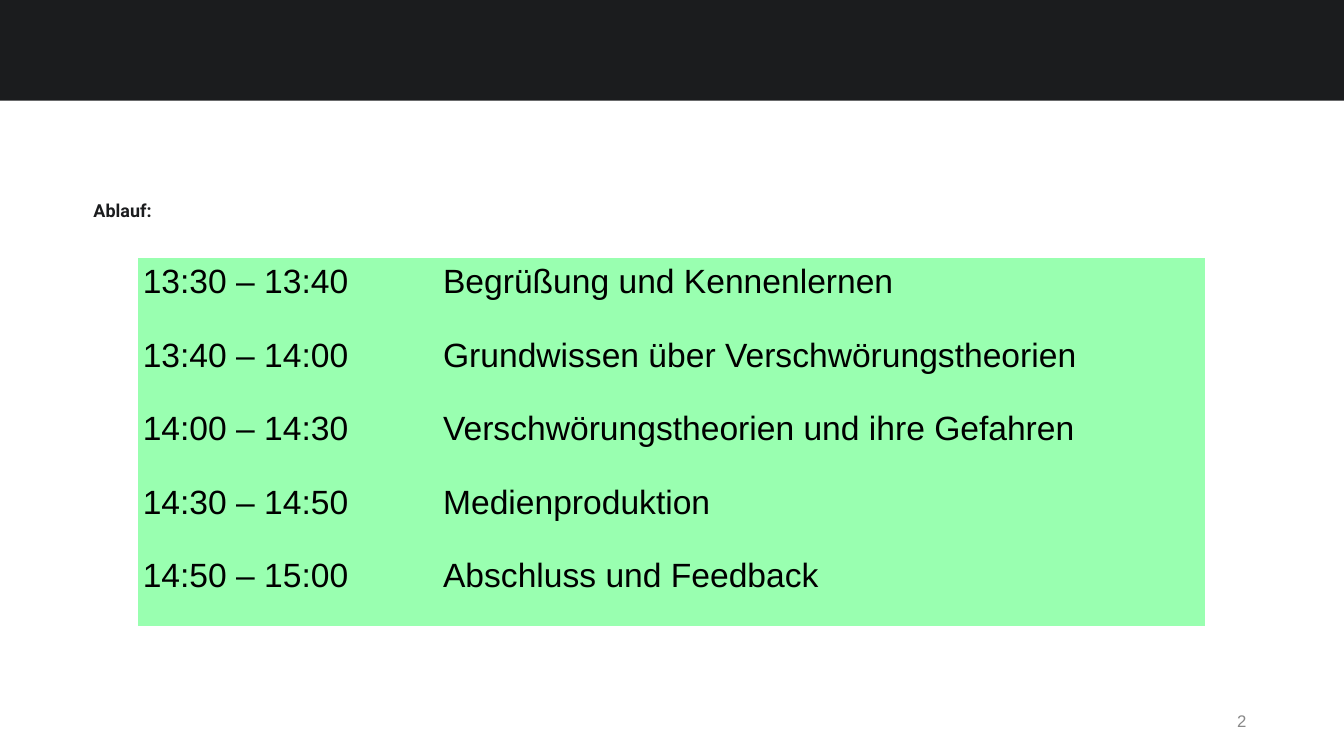
from pptx import Presentation
from pptx.dml.color import RGBColor
from pptx.enum.shapes import MSO_SHAPE
from pptx.enum.text import MSO_ANCHOR, MSO_AUTO_SIZE, PP_ALIGN
from pptx.oxml.ns import qn
from pptx.util import Pt

PX = 9525  # EMU in one px, 96 px to the inch
INK = RGBColor(0x1B, 0x1C, 0x1E)
GREY = RGBColor(0x88, 0x88, 0x88)
BLACK = RGBColor(0, 0, 0)
MINT = RGBColor(0x99, 0xFF, 0xB0)
NO_GRID = "{2D5ABB26-0587-4C30-8999-92F81FD0307C}"
INSET = 5
COLS = (286, 731)
ROW = 70
PLAN = (
    ("13:30 – 13:40", "Begrüßung und Kennenlernen"),
    ("13:40 – 14:00", "Grundwissen über Verschwörungstheorien"),
    ("14:00 – 14:30", "Verschwörungstheorien und ihre Gefahren"),
    ("14:30 – 14:50", "Medienproduktion"),
    ("14:50 – 15:00", "Abschluss und Feedback"),
)


def box(*sides):
    return [side * PX for side in sides]


def pad(item):
    item.margin_left = item.margin_right = INSET * PX
    item.margin_top = item.margin_bottom = INSET * PX


def write(frame, text, font, size, color, bold=False, align=PP_ALIGN.LEFT):
    para = frame.paragraphs[0]
    para.alignment = align
    run = para.add_run()
    run.text = text
    run.font.name = font
    run.font.size = Pt(size)
    run.font.bold = bold
    run.font.color.rgb = color
    return para


def add_bar(slide):
    bar = slide.shapes.add_shape(MSO_SHAPE.RECTANGLE, *box(0, 0, 1280, 96))
    bar.shadow.inherit = False
    bar.fill.solid()
    bar.fill.fore_color.rgb = INK
    bar.line.fill.background()


def set_title(slide, text):
    title = slide.shapes.title
    title.left, title.top, title.width, title.height = box(84, 150, 190, 66)
    frame = title.text_frame
    frame.auto_size = MSO_AUTO_SIZE.NONE
    frame.word_wrap = True
    frame.vertical_anchor = MSO_ANCHOR.BOTTOM
    pad(frame)
    write(frame, text, "Roboto", 12.8, INK, bold=True).line_spacing = 0.9


def add_plan(slide):
    area = box(131, 246, sum(COLS), ROW * len(PLAN))
    table = slide.shapes.add_table(len(PLAN), len(COLS), *area).table
    table.first_row = table.horz_banding = False
    table._tbl.tblPr.find(qn("a:tableStyleId")).text = NO_GRID
    for col, width in zip(table.columns, COLS):
        col.width = width * PX
    for row, texts in zip(table.rows, PLAN):
        row.height = ROW * PX
        for cell, text in zip(row.cells, texts):
            pad(cell)
            cell.fill.solid()
            cell.fill.fore_color.rgb = MINT
            write(cell.text_frame, text, "Arial", 24, BLACK)


def add_number(slide, text):
    frame = slide.shapes.add_textbox(*box(1172, 672, 20, 28)).text_frame
    frame.word_wrap = False
    frame.vertical_anchor = MSO_ANCHOR.MIDDLE
    pad(frame)
    write(frame, text, "Arial", 12, GREY, align=PP_ALIGN.RIGHT)


def main():
    prs = Presentation()
    prs.slide_width, prs.slide_height = box(1280, 720)
    slide = prs.slides.add_slide(prs.slide_layouts[5])

    # Header and page number
    add_bar(slide)
    add_number(slide, "2")

    # Schedule
    set_title(slide, "Ablauf:")
    add_plan(slide)

    prs.save("out.pptx")


if __name__ == "__main__":
    main()
